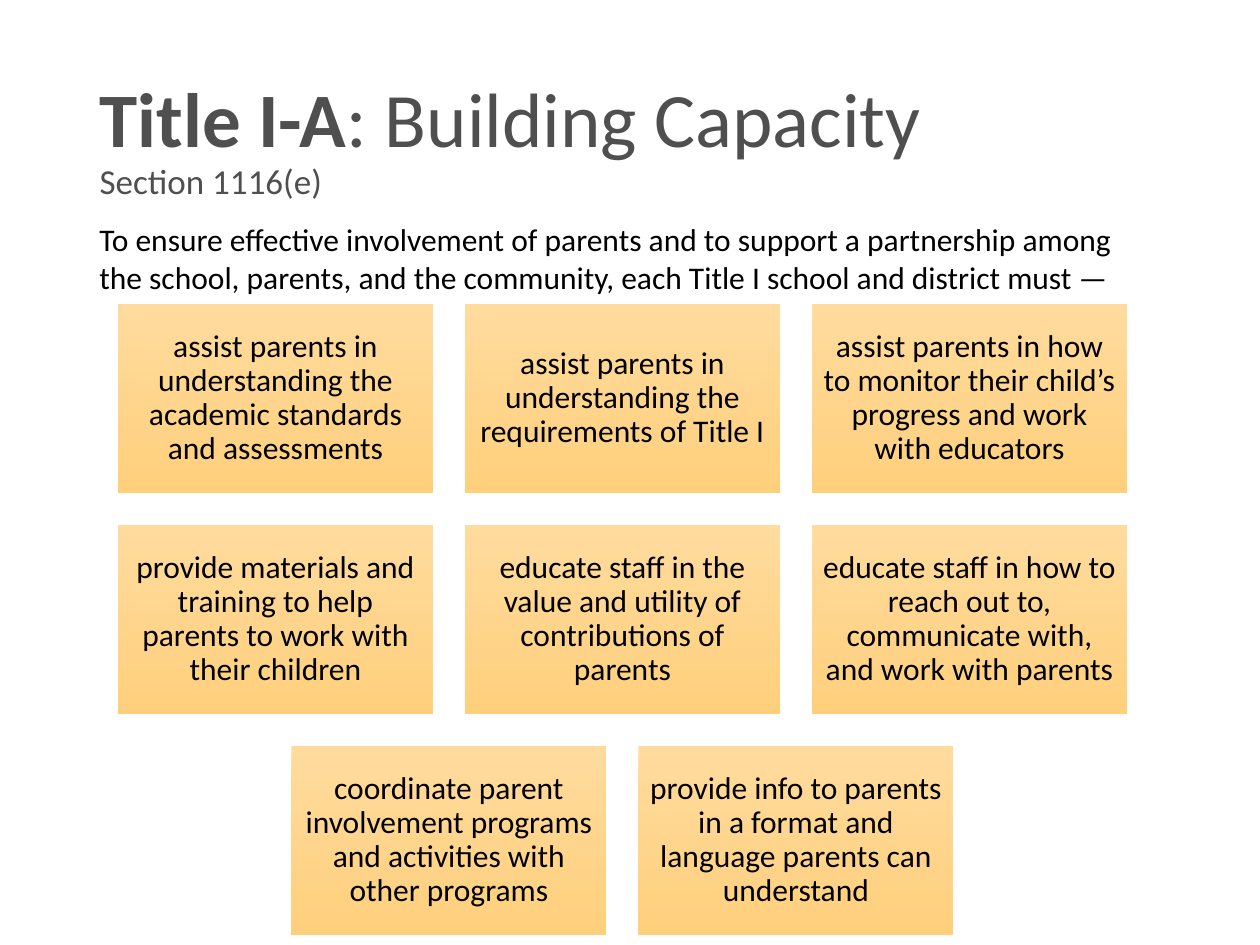
"""Build the slide on building parent capacity under Title I-A."""
import pptx
import pptx.dml.color
import pptx.enum.shapes
import pptx.enum.text
import pptx.util

RGB = pptx.dml.color.RGBColor
ALIGN = pptx.enum.text.PP_ALIGN
ANCHOR = pptx.enum.text.MSO_ANCHOR
FIT = pptx.enum.text.MSO_AUTO_SIZE

SCALE = 914400 / 126
GRAY = RGB(0x4F, 0x4F, 0x4F)
BLACK = RGB(0x00, 0x00, 0x00)
LIGHT = RGB(0xFF, 0xDB, 0x9E)
DEEP = RGB(0xFF, 0xD0, 0x7C)

LEFT, TOP, WIDE, HIGH = 118, 304, 315, 189
GAP = 32

INTRO = (
    "To ensure effective involvement of parents and to support a partnership among "
    "the school, parents, and the community, each Title I school and district must —"
)
DUTIES = [
    [
        "assist parents in understanding the academic standards and assessments",
        "assist parents in understanding the requirements of Title I",
        "assist parents in how to monitor their child’s progress and work with educators",
    ],
    [
        "provide materials and training to help parents to work with their children",
        "educate staff in the value and utility of contributions of parents",
        "educate staff in how to reach out to, communicate with, and work with parents",
    ],
    [
        "coordinate parent involvement programs and activities with other programs",
        "provide info to parents in a format and language parents can understand",
    ],
]


def px(*nums):
    """Turn pixel lengths into EMU."""
    return [pptx.util.Emu(round(num * SCALE)) for num in nums]


def style(item, **values):
    """Set each given attribute on the item."""
    for name, value in values.items():
        setattr(item, name, value)


def add_run(para, text, size, color, bold=False):
    """Add one formatted run to the paragraph."""
    run = para.add_run()
    run.text = text
    style(run.font, name="Calibri", size=pptx.util.Pt(size), bold=bold)
    run.font.color.rgb = color


def add_title(slide):
    """Fill the title placeholder with the heading and its section."""
    title = slide.shapes.title
    left, top, width, height = px(87, 50, 1086, 183)
    style(title, left=left, top=top, width=width, height=height)
    frame = title.text_frame
    style(frame, vertical_anchor=ANCHOR.MIDDLE, word_wrap=True, auto_size=FIT.NONE)
    para = frame.paragraphs[0]
    style(para, alignment=ALIGN.LEFT, line_spacing=0.9)
    add_run(para, "Title I-A", 44, GRAY, True)
    add_run(para, ": Building Capacity", 44, GRAY)
    para.add_line_break()
    add_run(para, "Section 1116(e)", 20, GRAY)


def add_intro(slide):
    """Add the lead-in sentence above the grid."""
    box = slide.shapes.add_textbox(*px(87, 214, 1086, 89))
    box.text_frame.word_wrap = True
    add_run(box.text_frame.paragraphs[0], INTRO, 18, BLACK)


def add_card(slide, left, top, text):
    """Add one shaded card with centred text."""
    card = slide.shapes.add_shape(
        pptx.enum.shapes.MSO_SHAPE.RECTANGLE, *px(left, top, WIDE, HIGH)
    )
    card.shadow.inherit = False
    card.line.fill.background()
    card.fill.gradient()
    card.fill.gradient_angle = 270
    for stop, color in zip(card.fill.gradient_stops, (LIGHT, DEEP)):
        stop.color.rgb = color
    frame = card.text_frame
    style(frame, word_wrap=True, vertical_anchor=ANCHOR.MIDDLE)
    for side in ("left", "right", "top", "bottom"):
        setattr(frame, f"margin_{side}", px(9)[0])
    para = frame.paragraphs[0]
    style(para, alignment=ALIGN.CENTER, line_spacing=0.9)
    add_run(para, text, 18, BLACK)


def add_grid(slide):
    """Lay out the duties in rows, centring the short one."""
    most = max(len(row) for row in DUTIES)
    for down, row in enumerate(DUTIES):
        for over, text in enumerate(row):
            shift = over + (most - len(row)) / 2
            left = LEFT + shift * (WIDE + GAP)
            add_card(slide, left, TOP + down * (HIGH + GAP), text)


def main():
    """Build and save the slide."""
    deck = pptx.Presentation()
    width, height = px(1260, 945)
    style(deck, slide_width=width, slide_height=height)
    slide = deck.slides.add_slide(deck.slide_layouts[5])
    add_title(slide)
    add_grid(slide)
    add_intro(slide)
    deck.save("out.pptx")


if __name__ == "__main__":
    main()
